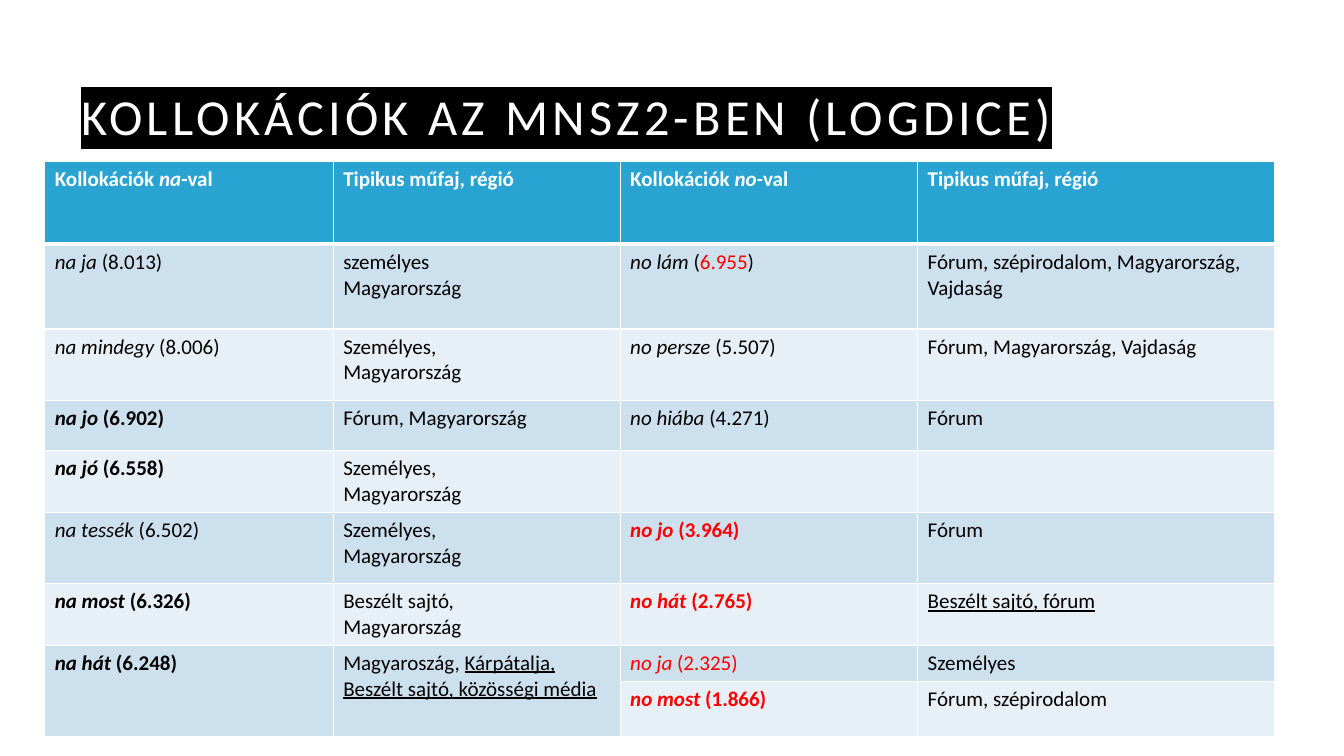
import pptx
import pptx.util
import pptx.dml.color
import pptx.enum.text
import pptx.oxml
import pptx.oxml.ns
from lxml import etree

Pt = pptx.util.Pt
RGB = pptx.dml.color.RGBColor
qn = pptx.oxml.ns.qn

WHITE = RGB(0xFF, 0xFF, 0xFF)
BLACK = RGB(0, 0, 0)
RED = RGB(0xFF, 0, 0)
BLUE = RGB(0x29, 0xA3, 0xD2)
BANDS = [RGB(0xCD, 0xE0, 0xEE), RGB(0xE8, 0xF0, 0xF7)]


class Deck:
    """Style and current slide."""
    face = "Calibri"

    def __init__(self, wide, high):
        self.file = pptx.Presentation()
        self.file.slide_width, self.file.slide_height = Pt(wide), Pt(high)
        self.slide = self.file.slides.add_slide(self.file.slide_layouts[5])

    def style(self, item, **form):
        for name, value in form.items():
            setattr(item, name, value)

    def run(self, para, text, color, **form):
        piece = para.add_run()
        piece.text = text
        self.style(piece.font, name=self.face, **form)
        piece.font.color.rgb = color
        return piece

    def child(self, node, tag, color):
        """Add an element holding one plain colour."""
        part = etree.SubElement(node, qn(tag))
        etree.SubElement(part, qn("a:srgbClr"), val=str(color))
        return part

    def title(self, text, box):
        shape = self.slide.shapes.title
        self.style(shape, **dict(zip(("left", "top", "width", "height"), map(Pt, box))))
        frame = shape.text_frame
        self.style(frame, word_wrap=True,
                   auto_size=pptx.enum.text.MSO_AUTO_SIZE.NONE,
                   vertical_anchor=pptx.enum.text.MSO_ANCHOR.BOTTOM)
        para = frame.paragraphs[0]
        self.style(para, alignment=pptx.enum.text.PP_ALIGN.LEFT, line_spacing=1.2)
        props = self.run(para, text, WHITE, size=Pt(36))._r.get_or_add_rPr()
        props.set("spc", "300")
        mark = self.child(props, "a:highlight", BLACK)
        props.find(qn("a:solidFill")).addnext(mark)

    def border(self, cell, low):
        props = cell._tc.get_or_add_tcPr()
        for spot, side in enumerate("LRTB"):
            width = Pt(low if side == "B" else 1)
            line = etree.Element(qn("a:ln" + side), w=str(int(width)))
            self.child(line, "a:solidFill", WHITE)
            props.insert(spot, line)

    def fill(self, cell, runs, color, head):
        """Flags: b bold, i italic, u underline, r red; a newline starts a paragraph."""
        cell.fill.solid()
        cell.fill.fore_color.rgb = color
        self.border(cell, 3 if head else 1)
        para = cell.text_frame.paragraphs[0]
        for text, flags in runs:
            for count, line in enumerate(text.split("\n")):
                if count:
                    para = cell.text_frame.add_paragraph()
                if line:
                    ink = WHITE if head else RED if "r" in flags else BLACK
                    self.run(para, line, ink, size=Pt(15), bold=head or "b" in flags,
                             italic="i" in flags, underline="u" in flags)

    def table(self, rows, spot, wides, highs):
        frame = self.slide.shapes.add_table(len(highs), len(wides), *map(Pt, spot),
                                            Pt(sum(wides)), Pt(sum(highs)))
        grid = frame.table
        grid.horz_banding = False
        for col, wide in zip(grid.columns, wides):
            col.width = Pt(wide)
        for row, high in zip(grid.rows, highs):
            row.height = Pt(high)
        for r, row in enumerate(rows):
            for c, runs in enumerate(row):
                color = BANDS[(r - 1) % 2] if r else BLUE
                self.fill(grid.cell(r, c), runs, color, r == 0)
        return grid


def plain(text, flags=""):
    return [(text, flags)]


def score(word, value, flags=""):
    return [(word + " ", "i" + flags), (f"({value})", flags)]


def main():
    deck = Deck(960, 540)

    # Title
    deck.title("KOLLOKÁCIÓK AZ MNSZ2-BEN (LOGDICE)", (51, 6.5, 822, 101))

    # Table contents
    genre = plain("Tipikus műfaj, régió")
    local = plain("Személyes,\nMagyarország")
    forum = plain("Fórum")
    rows = [
        [[("Kollokációk ", ""), ("na", "i"), ("-val", "")], genre,
         [("Kollokációk ", ""), ("no-", "i"), ("val", "")], genre],
        [score("na ja", "8.013"), plain("személyes\nMagyarország"),
         [("no lám ", "i"), ("(", ""), ("6.955", "r"), (")", "")],
         plain("Fórum, szépirodalom, Magyarország, Vajdaság")],
        [score("na mindegy", "8.006"), local,
         score("no persze", "5.507"), plain("Fórum, Magyarország, Vajdaság")],
        [score("na jo", "6.902", "b"), plain("Fórum, Magyarország"),
         score("no hiába", "4.271"), forum],
        [score("na jó", "6.558", "b"), local, [], []],
        [score("na tessék", "6.502"), local, score("no jo", "3.964", "br"), forum],
        [score("na most", "6.326", "b"), plain("Beszélt sajtó,\nMagyarország"),
         score("no hát", "2.765", "br"), plain("Beszélt sajtó, fórum", "u")],
        [score("na hát", "6.248", "b"),
         [("Magyaroszág, ", ""), ("Kárpátalja,\nBeszélt sajtó, közösségi média", "u")],
         score("no ja", "2.325", "r"), plain("Személyes")],
        [[], [], score("no most", "1.866", "br"), plain("Fórum, szépirodalom")],
    ]

    # Table with the last two rows joined on the left
    grid = deck.table(rows, (32, 115.5), (206, 205, 212.5, 255),
                      (59, 60.5, 51, 36, 42.5, 51, 43, 25, 39.5))
    for col in range(2):
        grid.cell(7, col).merge(grid.cell(8, col))

    deck.file.save("out.pptx")


if __name__ == "__main__":
    main()
